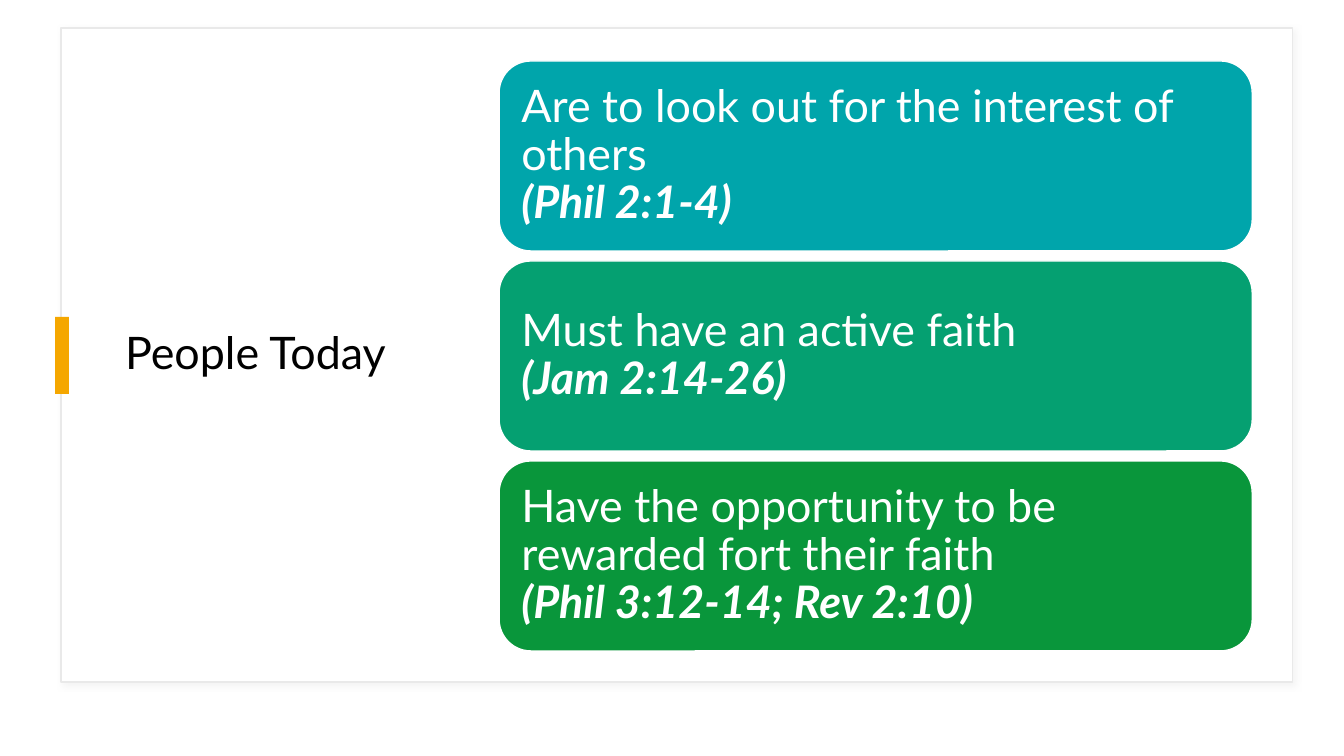
from dataclasses import dataclass

from lxml import etree
from pptx import Presentation
from pptx import util as u
from pptx.dml.color import RGBColor
from pptx.enum import shapes, text
from pptx.oxml import ns

SCALE = 914400 / 100.8  # EMU in one px


def px(count):
    return u.Emu(round(count * SCALE))


@dataclass(frozen=True)
class Theme:
    font: str = "Lato"
    size: int = 32
    ink: str = "000000"
    paper: str = "FFFFFF"
    edge: str = "E9E9E9"
    shade: str = "D9D9D9"
    accent: str = "F5A700"
    cards: tuple = ("00A5AB", "05A071", "09963B")


class Deck:
    def __init__(self, theme):
        self.theme = theme
        self.file = Presentation()
        self.file.slide_width = u.Inches(13.33)
        self.file.slide_height = u.Inches(7.5)
        self.slide = self.file.slides.add_slide(self.file.slide_layouts[5])

    def box(self, kind, area, fill, line=None):
        shape = self.slide.shapes.add_shape(kind, *map(px, area))
        shape.shadow.inherit = False
        shape.fill.solid()
        shape.fill.fore_color.rgb = RGBColor.from_string(fill)
        if line:
            shape.line.color.rgb = RGBColor.from_string(line)
            shape.line.width = u.Pt(1)
        else:
            shape.line.fill.background()
        return shape

    def panel(self, area):
        theme = self.theme
        shape = self.box(shapes.MSO_SHAPE.RECTANGLE, area, theme.paper, theme.edge)
        effects = shape.element.spPr.find(ns.qn("a:effectLst"))
        shadow = etree.SubElement(effects, ns.qn("a:outerShdw"), blurRad=str(u.Pt(4)),
                                  dist=str(u.Pt(3)), dir="2700000")
        color = etree.SubElement(shadow, ns.qn("a:srgbClr"), val=theme.shade)
        etree.SubElement(color, ns.qn("a:alpha"), val="30000")

    def label(self, frame, parts, color, inset):
        """Fill a frame with one paragraph; every part after the first is a bold italic line."""
        margins = dict.fromkeys(
            ("margin_left", "margin_top", "margin_right", "margin_bottom"), px(inset))
        layout = {"word_wrap": True, "auto_size": text.MSO_AUTO_SIZE.NONE,
                  "vertical_anchor": text.MSO_ANCHOR.MIDDLE, **margins}
        for name, value in layout.items():
            setattr(frame, name, value)
        para = frame.paragraphs[0]
        para.alignment = text.PP_ALIGN.LEFT
        para.line_spacing = 0.9
        for order, words in enumerate(parts):
            if order:
                para.add_line_break()
            run = para.add_run()
            run.text = words
            look = {"name": self.theme.font, "size": u.Pt(self.theme.size),
                    "bold": order > 0, "italic": order > 0}
            for name, value in look.items():
                setattr(run.font, name, value)
            run.font.color.rgb = RGBColor.from_string(color)

    def title(self, area, words):
        title = self.slide.shapes.title
        for name, value in zip(("left", "top", "width", "height"), area):
            setattr(title, name, px(value))
        self.label(title.text_frame, [words], self.theme.ink, inset=10)
        self.slide.shapes.element.append(title.element)  # bring in front of the panel

    def card(self, area, fill, parts):
        shape = self.box(shapes.MSO_SHAPE.ROUNDED_RECTANGLE, area, fill, self.theme.paper)
        self.label(shape.text_frame, parts, self.theme.paper, inset=13)


POINTS = (
    ("Are to look out for the interest of others", "(Phil 2:1-4)"),
    ("Must have an active faith", "(Jam 2:14-26)"),
    ("Have the opportunity to be rewarded fort their faith", "(Phil 3:12-14; Rev 2:10)"),
)


def main():
    theme = Theme()
    deck = Deck(theme)
    deck.panel((61, 28, 1231, 654))
    deck.title((115, 55, 330, 600), "People Today")
    deck.box(shapes.MSO_SHAPE.RECTANGLE, (55, 317, 14, 77), theme.accent)
    for row, (fill, parts) in enumerate(zip(theme.cards, POINTS)):
        deck.card((499, 61 + 200 * row, 753, 190), fill, parts)
    deck.file.save("out.pptx")


if __name__ == "__main__":
    main()
